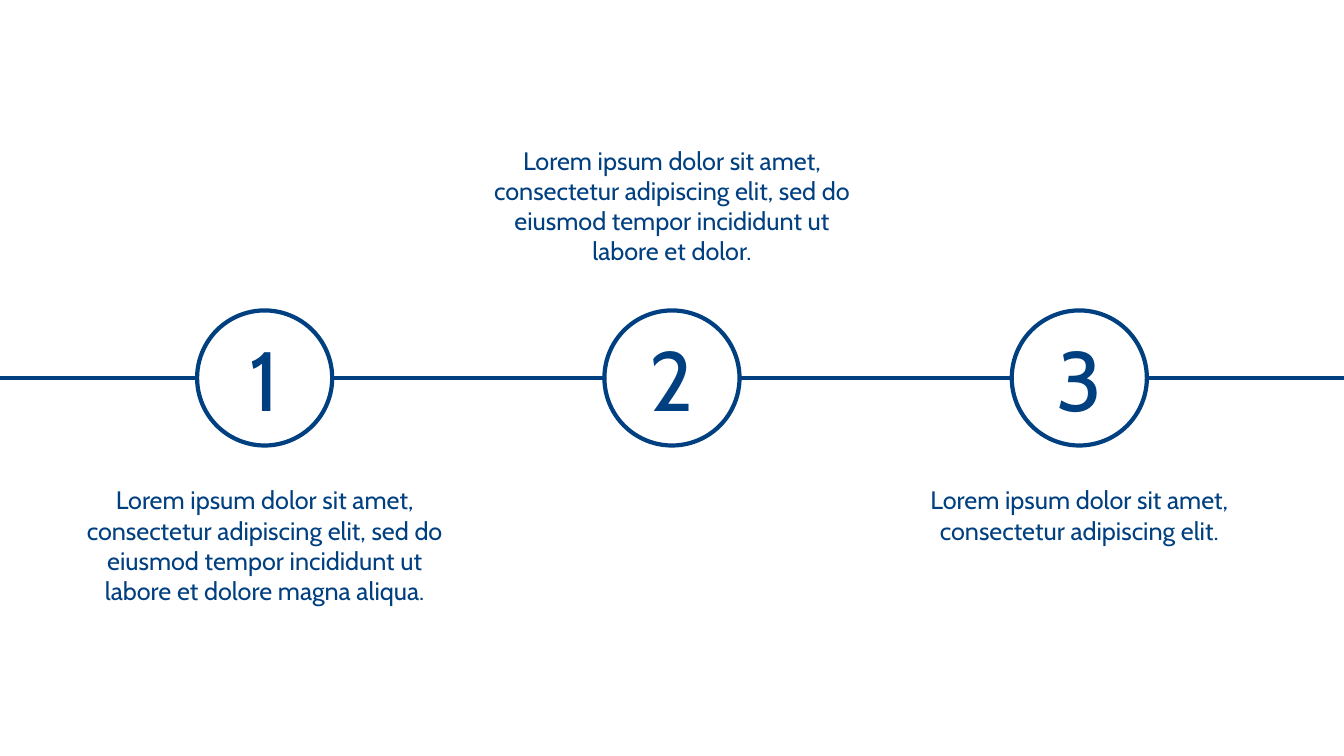
from dataclasses import dataclass

from lxml.etree import SubElement
from pptx import Presentation
from pptx.dml.color import RGBColor
from pptx.enum.shapes import MSO_CONNECTOR, MSO_SHAPE
from pptx.enum.text import MSO_ANCHOR, MSO_AUTO_SIZE, PP_ALIGN
from pptx.oxml.ns import qn
from pptx.util import Inches, Pt


@dataclass(frozen=True)
class Theme:
    navy: RGBColor = RGBColor(0x00, 0x3F, 0x80)
    white: RGBColor = RGBColor(0xFF, 0xFF, 0xFF)
    font: str = "Cabin"
    body: Pt = Pt(18)
    number: Pt = Pt(60)
    stroke: Pt = Pt(3)


THEME = Theme()
WIDTH, HEIGHT = 13.33, 7.5
MIDDLE = HEIGHT / 2
STEP = 4.04
DIAMETER = 1.34
TEXT_WIDTH = 4.01
ABOVE, BELOW = 1.39, 4.76

# Text, top and height of each step's description
STEPS = [
    ("Lorem ipsum dolor sit amet, consectetur adipiscing elit, sed do "
     "eiusmod tempor incididunt ut labore et dolore magna aliqua.", BELOW, 1.36),
    ("Lorem ipsum dolor sit amet, consectetur adipiscing elit, sed do "
     "eiusmod tempor incididunt ut labore et dolor.", ABOVE, 1.36),
    ("Lorem ipsum dolor sit amet, consectetur adipiscing elit.", BELOW, 0.71),
]


def add_centred_run(tf, text, size):
    p = tf.paragraphs[0]
    p.alignment = PP_ALIGN.CENTER
    r = p.add_run()
    r.text = text
    r.font.name = THEME.font
    r.font.size = size
    r.font.color.rgb = THEME.navy


prs = Presentation()
prs.slide_width, prs.slide_height = Inches(WIDTH), Inches(HEIGHT)
s = prs.slides.add_slide(prs.slide_layouts[6])

timeline = s.shapes.add_connector(
    MSO_CONNECTOR.STRAIGHT, 0, Inches(MIDDLE), Inches(WIDTH), Inches(MIDDLE))
timeline.line.color.rgb = THEME.navy
timeline.line.width = THEME.stroke
SubElement(timeline._element.spPr, qn("a:effectLst"))

for i, (text, top, height) in enumerate(STEPS):
    centre = WIDTH / 2 + (i - 1) * STEP

    box = s.shapes.add_textbox(
        Inches(centre - TEXT_WIDTH / 2), Inches(top), Inches(TEXT_WIDTH), Inches(height))
    tf = box.text_frame
    tf.word_wrap = True
    tf.auto_size = MSO_AUTO_SIZE.SHAPE_TO_FIT_TEXT
    add_centred_run(tf, text, THEME.body)

    circle = s.shapes.add_shape(
        MSO_SHAPE.OVAL, Inches(centre - DIAMETER / 2), Inches(MIDDLE - DIAMETER / 2),
        Inches(DIAMETER), Inches(DIAMETER))
    circle.shadow.inherit = False
    circle.fill.solid()
    circle.fill.fore_color.rgb = THEME.white
    circle.line.color.rgb = THEME.navy
    circle.line.width = THEME.stroke
    circle.text_frame.vertical_anchor = MSO_ANCHOR.MIDDLE
    add_centred_run(circle.text_frame, str(i + 1), THEME.number)

prs.save("out.pptx")
